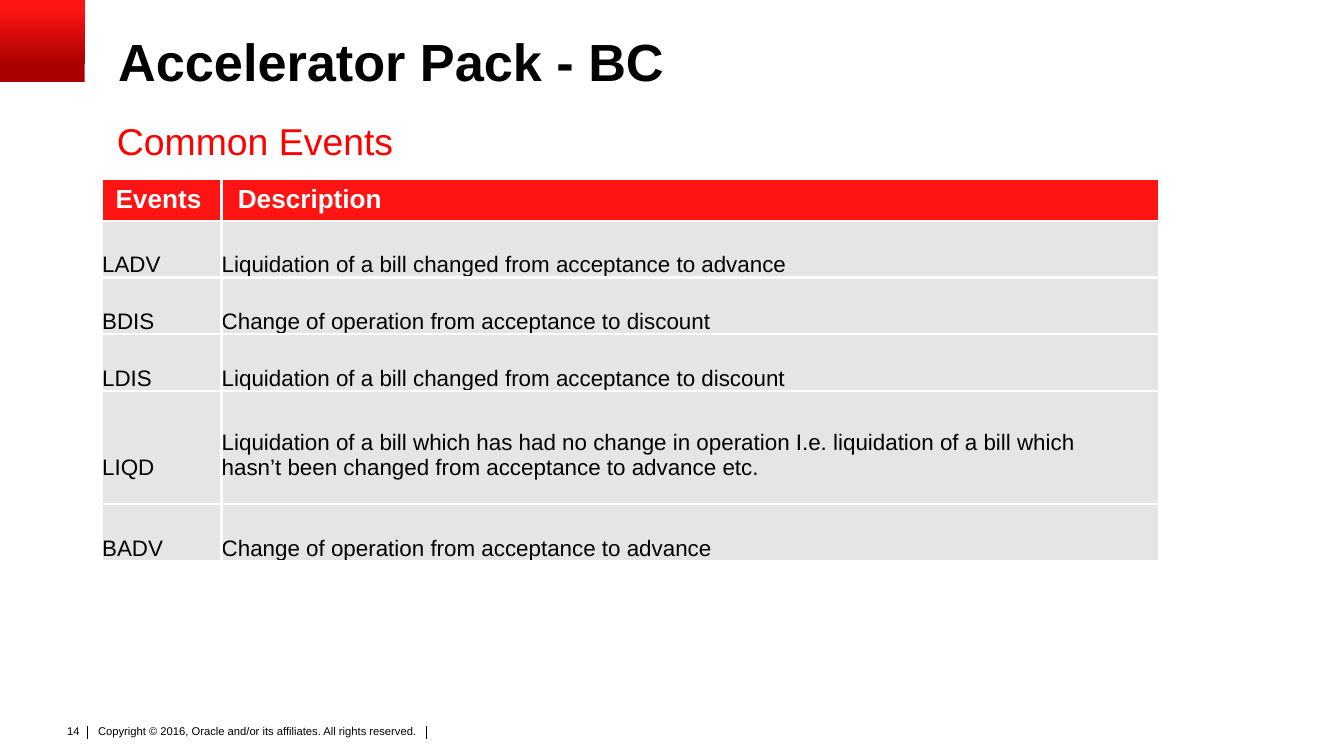
from dataclasses import dataclass

from lxml import etree
from pptx import Presentation
from pptx.dml.color import RGBColor
from pptx.enum import shapes, text
from pptx.oxml import ns
from pptx.util import Inches, Pt


@dataclass(frozen=True)
class Theme:
    font: str = "Arial"
    black: RGBColor = RGBColor(0, 0, 0)
    white: RGBColor = RGBColor(0xFF, 0xFF, 0xFF)
    red: RGBColor = RGBColor(0xFF, 0x14, 0x14)
    dark_red: RGBColor = RGBColor(0xAA, 0, 0)
    subtitle_red: RGBColor = RGBColor(0xFF, 0, 0)
    grey: RGBColor = RGBColor(0xE5, 0xE5, 0xE5)
    title_size: int = 28
    subtitle_size: int = 20
    header_size: int = 14
    body_size: int = 12
    footer_size: int = 6
    border: float = 1.5
    rule: float = 0.5


THEME = Theme()

HEADER = ("Events", "Description")
EVENTS = (
    ("LADV", "Liquidation of a bill changed from acceptance to advance"),
    ("BDIS", "Change of operation from acceptance to discount"),
    ("LDIS", "Liquidation of a bill changed from acceptance to discount"),
    ("LIQD", "Liquidation of a bill which has had no change in operation I.e. "
             "liquidation of a bill which\n"
             "hasn’t been changed from acceptance to advance etc."),
    ("BADV", "Change of operation from acceptance to advance"),
)


def set_text(frame, content, size, color, bold=False):
    frame.text = content
    for paragraph in frame.paragraphs:
        font = paragraph.font
        font.name, font.size, font.bold = THEME.font, Pt(size), bold
        font.color.rgb = color


def add_text(slide, box, content, size, color, bold=False, insets=(0, 0)):
    """Add a text box; insets are the horizontal and vertical margins."""
    frame = slide.shapes.add_textbox(*map(Inches, box)).text_frame
    frame.word_wrap = True
    frame.margin_left = frame.margin_right = Inches(insets[0])
    frame.margin_top = frame.margin_bottom = Inches(insets[1])
    set_text(frame, content, size, color, bold)
    return frame.paragraphs[0]


def add_corner_block(slide, box):
    block = slide.shapes.add_shape(shapes.MSO_SHAPE.RECTANGLE, *map(Inches, box))
    block.shadow.inherit = False
    block.line.fill.background()
    block.fill.gradient()
    block.fill.gradient_angle = 90
    stops = ((0.2, THEME.dark_red), (0.9, THEME.red))
    for stop, (position, color) in zip(block.fill.gradient_stops, stops):
        stop.position = position
        stop.color.rgb = color


def add_heading(slide, box):
    left, top, width, height = box
    title = add_text(slide, (left + 0.01, top, width - 0.5, height),
                     "Accelerator Pack - BC", THEME.title_size, THEME.black, bold=True)
    title.line_spacing = 0.9
    add_text(slide, (left, top + 0.61, width, 0.33), "Common Events",
             THEME.subtitle_size, THEME.subtitle_red)


def set_borders(cell, sides):
    """Draw white lines on the given sides, named in the order L, R, T, B."""
    properties = cell._tc.get_or_add_tcPr()
    for index, side in enumerate(sides):
        line = etree.Element(ns.qn(f"a:ln{side}"), w=str(Pt(THEME.border)))
        fill = etree.SubElement(line, ns.qn("a:solidFill"))
        etree.SubElement(fill, ns.qn("a:srgbClr"), val=str(THEME.white))
        properties.insert(index, line)


def style_cell(cell, content, is_header):
    set_text(cell.text_frame, content,
             THEME.header_size if is_header else THEME.body_size,
             THEME.white if is_header else THEME.black, bold=is_header)
    cell.vertical_anchor = text.MSO_ANCHOR.MIDDLE if is_header else text.MSO_ANCHOR.BOTTOM
    cell.margin_left = cell.margin_right = Inches(0.1 if is_header else 0)
    cell.margin_top = cell.margin_bottom = Inches(0.04 if is_header else 0)
    cell.fill.solid()
    cell.fill.fore_color.rgb = THEME.red if is_header else THEME.grey


def add_events_table(slide, box):
    """Header row, then rows of equal height; a two-line event takes a double row."""
    rows = (HEADER, *EVENTS)
    header_height, code_width = 0.31, 0.89
    row_height = (box[3] - header_height) / (len(EVENTS) + 1)
    table = slide.shapes.add_table(len(rows), len(HEADER), *map(Inches, box)).table
    table.columns[0].width = Inches(code_width)
    table.columns[1].width = Inches(box[2] - code_width)
    for index, contents in enumerate(rows):
        is_header = index == 0
        is_double = "\n" in contents[1]
        height = header_height if is_header else row_height * (2 if is_double else 1)
        table.rows[index].height = Inches(height)
        inner_sides = ("" if is_header else "T") + ("B" if index < len(rows) - 1 else "")
        for cell, content, side in zip(table.rows[index].cells, contents, "RL"):
            style_cell(cell, content, is_header)
            set_borders(cell, side + inner_sides)
            if is_double:
                cell.margin_bottom = Inches(0.18)
    table.cell(0, 1).margin_left = Inches(0.12)


def add_footer(slide, box):
    left, top, width, height = box
    number = add_text(slide, (left, top, 0.3, height), "14",
                      THEME.footer_size, THEME.black, insets=(0.1, 0.05))
    number.alignment = text.PP_ALIGN.RIGHT
    add_text(slide, (left + 0.3, top + 0.03, width - 0.3, 0.24),
             "Copyright © 2016, Oracle and/or its affiliates. All rights reserved.",
             THEME.footer_size, THEME.black, insets=(0.04, 0.02))
    for offset in (0.26, 2.78):
        x = Inches(left + offset)
        rule = slide.shapes.add_connector(shapes.MSO_CONNECTOR.STRAIGHT,
                                          x, Inches(top + 0.06), x, Inches(top + 0.16))
        rule.line.color.rgb = THEME.black
        rule.line.width = Pt(THEME.rule)
        etree.SubElement(rule._element.spPr, ns.qn("a:effectLst"))


def main():
    presentation = Presentation()
    presentation.slide_width = Inches(10)
    presentation.slide_height = presentation.slide_width * 9 // 16
    slide = presentation.slides.add_slide(presentation.slide_layouts[6])
    add_footer(slide, (0.39, 5.34, 3.04, 0.2))
    add_corner_block(slide, (0, 0, 0.63, 0.61))
    add_heading(slide, (0.87, 0.27, 9, 0.83))
    add_events_table(slide, (0.76, 1.33, 7.86, 2.84))
    presentation.save("out.pptx")


if __name__ == "__main__":
    main()
